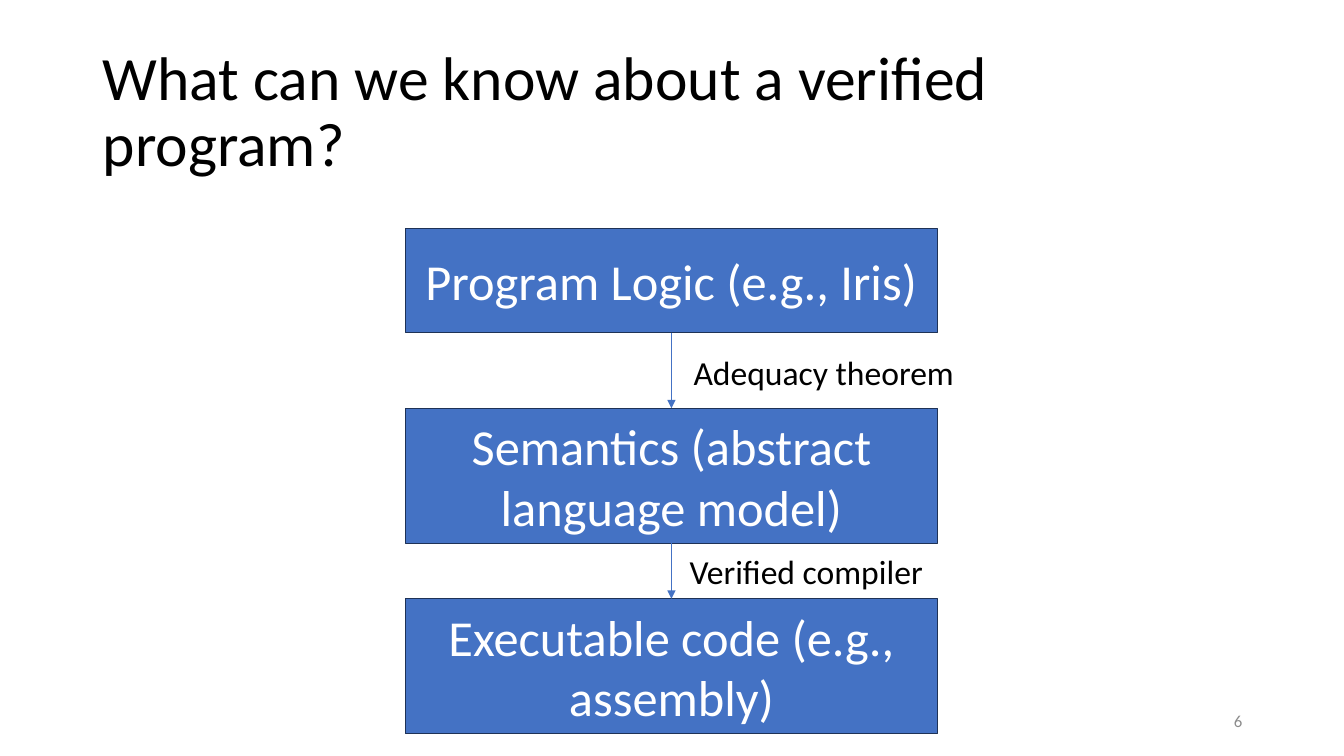
from lxml import etree
from pptx import Presentation
from pptx.dml.color import RGBColor
from pptx.enum import shapes, text
from pptx.oxml.ns import qn
from pptx.util import Inches, Pt

BLACK = RGBColor(0x00, 0x00, 0x00)
WHITE = RGBColor(0xFF, 0xFF, 0xFF)
GREY = RGBColor(0x8C, 0x8C, 0x8C)
BLUE = RGBColor(0x44, 0x72, 0xC4)
NAVY = RGBColor(0x1E, 0x32, 0x56)

LAYER_LEFT, LAYER_WIDTH = 4.02, 5.28
LAYER_CENTER = LAYER_LEFT + LAYER_WIDTH / 2
LAYERS = [
    ("Program Logic (e.g., Iris)", 2.27, 1.03),
    ("Semantics (abstract language model)", 4.05, 1.34),
    ("Executable code (e.g., assembly)", 5.94, 1.34),
]
STEPS = [
    ("Adequacy theorem", 6.78, 3.44),
    ("Verified compiler", 6.74, 5.42),
]


def write_text(shape, content, *, size, color=BLACK, align=text.PP_ALIGN.LEFT,
               anchor=text.MSO_ANCHOR.MIDDLE, line_spacing=None):
    frame = shape.text_frame
    frame.word_wrap = True
    frame.auto_size = text.MSO_AUTO_SIZE.NONE
    frame.vertical_anchor = anchor
    paragraph = frame.paragraphs[0]
    paragraph.alignment = align
    paragraph.line_spacing = line_spacing
    run = paragraph.add_run()
    run.text = content
    run.font.name = "Calibri"
    run.font.size = Pt(size)
    run.font.color.rgb = color


def place_title(slide, content):
    title = slide.shapes.title
    title.left, title.top = Inches(0.92), Inches(0.4)
    title.width, title.height = Inches(11.5), Inches(1.45)
    write_text(title, content, size=44, line_spacing=0.9)


def add_label(slide, content, left, top, width, height, **text_format):
    label = slide.shapes.add_textbox(
        Inches(left), Inches(top), Inches(width), Inches(height))
    write_text(label, content, **text_format)


def add_layer(slide, content, top, height):
    layer = slide.shapes.add_shape(
        shapes.MSO_SHAPE.RECTANGLE, Inches(LAYER_LEFT), Inches(top),
        Inches(LAYER_WIDTH), Inches(height))
    layer.shadow.inherit = False
    layer.fill.solid()
    layer.fill.fore_color.rgb = BLUE
    layer.line.color.rgb = NAVY
    layer.line.width = Pt(1)
    write_text(layer, content, size=36, color=WHITE,
               align=text.PP_ALIGN.CENTER)
    return layer


def add_arrow(slide, upper, lower):
    center = Inches(LAYER_CENTER)
    arrow = slide.shapes.add_connector(
        shapes.MSO_CONNECTOR.STRAIGHT, center, upper.top + upper.height,
        center, lower.top)
    arrow.begin_connect(upper, 2)
    arrow.end_connect(lower, 0)
    arrow.line.color.rgb = BLUE
    arrow.line.width = Pt(0.5)
    line = arrow.line._get_or_add_ln()
    etree.SubElement(line, qn("a:tailEnd"), type="triangle")
    etree.SubElement(arrow._element.spPr, qn("a:effectLst"))


def main():
    presentation = Presentation()
    presentation.slide_width = Inches(13.33)
    presentation.slide_height = Inches(7.5)
    slide = presentation.slides.add_slide(presentation.slide_layouts[5])

    place_title(slide, "What can we know about a verified program?")
    add_label(slide, "6", 9.42, 6.95, 3, 0.4, size=12, color=GREY,
              align=text.PP_ALIGN.RIGHT)
    layers = [add_layer(slide, *layer) for layer in LAYERS]
    for upper, lower in zip(layers, layers[1:]):
        add_arrow(slide, upper, lower)
    for content, left, top in STEPS:
        add_label(slide, content, left, top, 3.25, 0.5, size=24,
                  anchor=text.MSO_ANCHOR.TOP)

    presentation.save("out.pptx")


if __name__ == "__main__":
    main()
